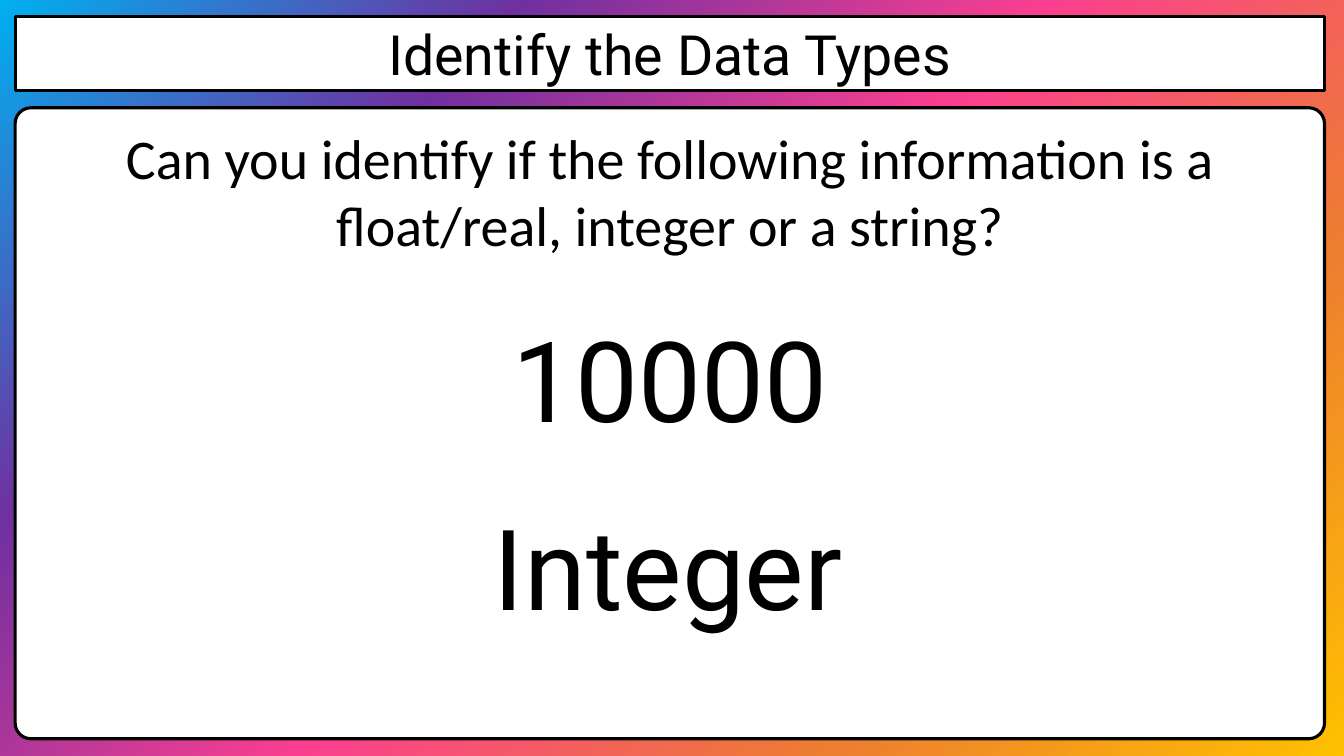
from pptx import Presentation
from pptx.dml.color import RGBColor as RGB
from pptx.enum.shapes import MSO_SHAPE as SHAPE
from pptx.enum.text import MSO_ANCHOR as ANCHOR, PP_ALIGN as ALIGN
from pptx.oxml import parse_xml
from pptx.oxml.ns import nsdecls
from pptx.util import Pt

COLORS = {
    "gold": "FFC000",
    "orange": "ED7D31",
    "pink": "FB3F90",
    "purple": "7030A0",
    "blue": "00B0F0",
    "white": "FFFFFF",
    "black": "000000",
}
GLOW = ["gold", "orange", "pink", "purple", "blue"]
LEFT, WIDE = 10.8, 935.3


def color(name):
    return RGB.from_string(COLORS[name])


def paint_back(slide):
    """Radial gradient that spreads from the bottom right corner."""
    slide.background.fill.gradient()
    old = slide.element.xpath(".//p:bgPr/a:gradFill")[0]
    step = 100000 // (len(GLOW) - 1)
    stops = "".join(
        f'<a:gs pos="{i * step}"><a:srgbClr val="{COLORS[name]}"/></a:gs>'
        for i, name in enumerate(GLOW)
    )
    new = parse_xml(
        f'<a:gradFill {nsdecls("a")} rotWithShape="1"><a:gsLst>{stops}</a:gsLst>'
        '<a:path path="circle"><a:fillToRect l="100000" t="100000"/></a:path>'
        "</a:gradFill>"
    )
    old.getparent().replace(old, new)


def write(shape, text, size, face, anchor):
    frame = shape.text_frame
    frame.word_wrap = True
    frame.vertical_anchor = anchor
    para = frame.paragraphs[0]
    para.text = text
    para.alignment = ALIGN.CENTER
    para.font.size = Pt(size)
    para.font.name = face
    para.font.color.rgb = color("black")


def add_panel(slide, kind, top, high):
    panel = slide.shapes.add_shape(kind, Pt(LEFT), Pt(top), Pt(WIDE), Pt(high))
    panel.shadow.inherit = False
    panel.fill.solid()
    panel.fill.fore_color.rgb = color("white")
    panel.line.color.rgb = color("black")
    panel.line.width = Pt(2.25)
    return panel


def add_word(slide, text, left, top):
    box = slide.shapes.add_textbox(Pt(left), Pt(top), Pt(933.1), Pt(104.4))
    write(box, text, 80, "Roboto", ANCHOR.TOP)


def main():
    deck = Presentation()
    deck.slide_width, deck.slide_height = Pt(960), Pt(540)
    slide = deck.slides.add_slide(deck.slide_layouts[6])
    paint_back(slide)

    # Title bar
    title = add_panel(slide, SHAPE.RECTANGLE, 11.5, 53.3)
    write(title, "Identify the Data Types", 39.6, "Roboto", ANCHOR.MIDDLE)

    # Question panel
    body = add_panel(slide, SHAPE.ROUNDED_RECTANGLE, 77, 450.7)
    body.adjustments[0] = 0.025
    body.text_frame.margin_top = Pt(8)
    ask = ("Can you identify if the following information is a "
           "float/real, integer or a string?")
    write(body, ask, 40, "Calibri", ANCHOR.TOP)

    # Value and its data type
    add_word(slide, "10000", 12.2, 218.2)
    add_word(slide, "Integer", LEFT, 352.8)

    deck.save("out.pptx")


if __name__ == "__main__":
    main()
